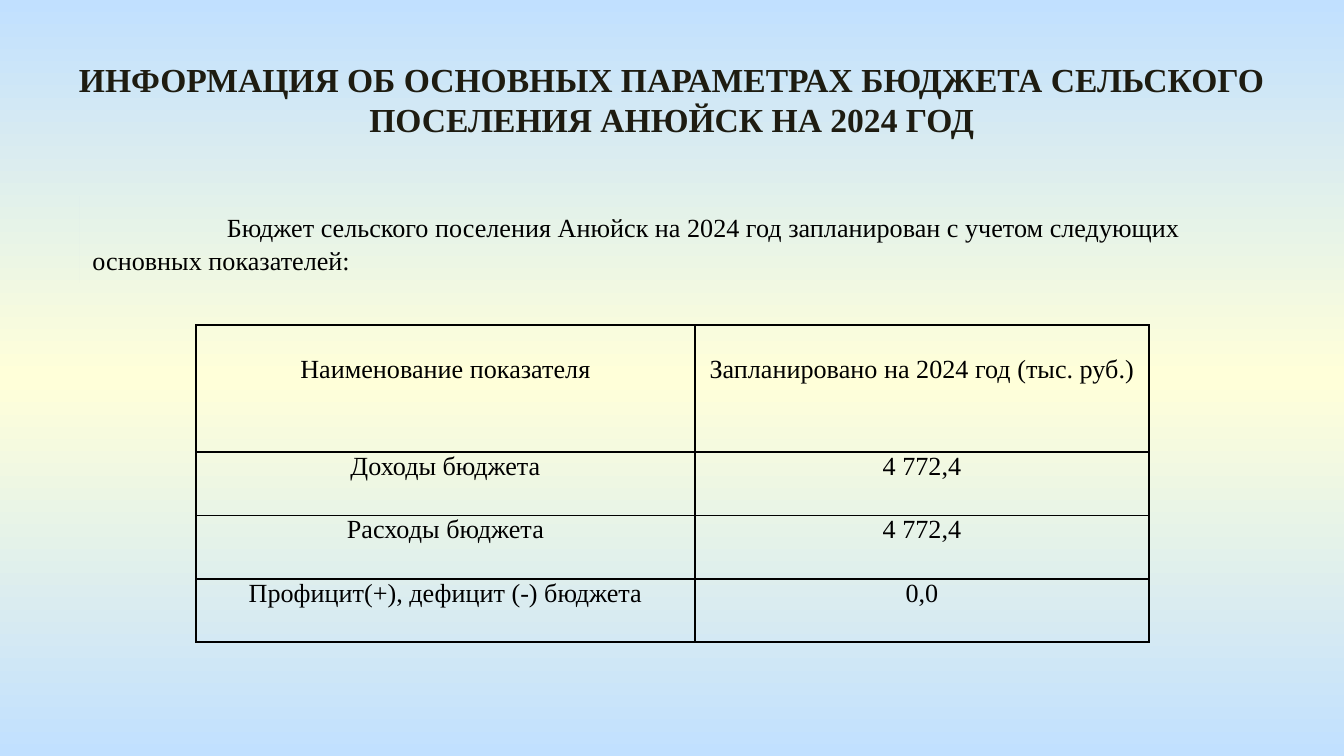
"""Build the slide with the main budget figures of a rural settlement."""
from copy import deepcopy

from lxml.etree import SubElement
from pptx import Presentation
from pptx.dml.color import RGBColor
from pptx.enum.shapes import MSO_SHAPE
from pptx.enum.text import MSO_ANCHOR, PP_ALIGN
from pptx.oxml import parse_xml
from pptx.oxml.ns import nsdecls, qn
from pptx.util import Inches, Pt

BLACK = RGBColor(0x00, 0x00, 0x00)
DARK = RGBColor(0x1E, 0x1C, 0x11)
SKY = RGBColor(0xC1, 0xE0, 0xFF)
CREAM = RGBColor(0xFF, 0xFF, 0xD9)

TITLE = "ИНФОРМАЦИЯ ОБ ОСНОВНЫХ ПАРАМЕТРАХ БЮДЖЕТА СЕЛЬСКОГО ПОСЕЛЕНИЯ АНЮЙСК НА 2024 ГОД"
INTRO = "Бюджет сельского поселения Анюйск на 2024 год запланирован с учетом следующих основных показателей:"
ROWS = [
    ("Наименование показателя", "Запланировано на 2024 год (тыс. руб.)"),
    ("Доходы бюджета", "4 772,4"),
    ("Расходы бюджета", "4 772,4"),
    ("Профицит(+), дефицит (-) бюджета", "0,0"),
]
STOPS = [(0, SKY), (0.5, CREAM), (1, SKY)]

WIDTH = 10
HEIGHT = WIDTH * 9 / 16
TITLE_AREA = (0.35, 0.39, 9.3, 0.71)
INTRO_AREA = (0.59, 1.46, 8.74, 0.64)
TABLE_LEFT, TABLE_TOP, TABLE_HEIGHT = 1.46, 2.42, 2.36
COLUMN_WIDTHS = (3.71, 3.38)
ROW_SHARES = (2, 1, 1, 1)
HEADER_DROP = 0.22
CELL_MARGINS = {"margin_left": 0.07, "margin_right": 0.07, "margin_top": 0, "margin_bottom": 0}

TITLE_FONT = {"name": "Times New Roman", "size": Pt(18), "bold": True}
BODY_FONT = {"name": "Times New Roman", "size": Pt(14), "bold": False}


def set_all(target, values):
    for name, value in values.items():
        setattr(target, name, value)


def write(frame, text, font, color, align):
    paragraph = frame.paragraphs[0]
    paragraph.alignment = align
    span = paragraph.add_run()
    span.text = text
    set_all(span.font, font)
    span.font.color.rgb = color
    return paragraph


def paint_background(page):
    fill = page.background.fill
    fill.gradient()
    stop_list = next(page.background._cSld.iter(qn("a:gsLst")))
    stop_list.append(deepcopy(stop_list[0]))
    for stop, (position, color) in zip(fill.gradient_stops, STOPS):
        stop.position = position
        stop.color.rgb = color
    fill.gradient_angle = 270


def add_title(page):
    box = page.shapes.add_textbox(*map(Inches, TITLE_AREA))
    box.text_frame.word_wrap = True
    write(box.text_frame, TITLE, TITLE_FONT, DARK, PP_ALIGN.CENTER)


def add_intro(page):
    box = page.shapes.add_shape(MSO_SHAPE.RECTANGLE, *map(Inches, INTRO_AREA))
    box._element.set("useBgFill", "1")
    box.line.fill.background()
    box.shadow.inherit = False
    set_all(box.text_frame, {"word_wrap": True, "vertical_anchor": MSO_ANCHOR.BOTTOM})
    paragraph = write(box.text_frame, INTRO, BODY_FONT, BLACK, PP_ALIGN.LEFT)
    paragraph.line_spacing = Pt(17.7)
    paragraph._p.get_or_add_pPr().set("indent", str(Inches(1)))


def add_borders(cell):
    properties = cell._tc.get_or_add_tcPr()
    for place, side in enumerate("LRTB"):
        line = parse_xml(f'<a:ln{side} {nsdecls("a")} w="{Pt(1)}"/>')
        solid = SubElement(line, qn("a:solidFill"))
        SubElement(solid, qn("a:srgbClr")).set("val", str(BLACK))
        properties.insert(place, line)


def add_budget_table(page):
    heights = [TABLE_HEIGHT * share / sum(ROW_SHARES) for share in ROW_SHARES]
    area = (TABLE_LEFT, TABLE_TOP, sum(COLUMN_WIDTHS), TABLE_HEIGHT)
    table = page.shapes.add_table(len(ROWS), len(COLUMN_WIDTHS), *map(Inches, area)).table
    set_all(table, {"first_row": False, "horz_banding": False})
    for column, width in zip(table.columns, COLUMN_WIDTHS):
        column.width = Inches(width)
    for number, (row, height, texts) in enumerate(zip(table.rows, heights, ROWS)):
        row.height = Inches(height)
        for cell, text in zip(row.cells, texts):
            set_all(cell, {name: Inches(size) for name, size in CELL_MARGINS.items()})
            if number == 0:
                cell.margin_top = Inches(HEADER_DROP)
            cell.fill.background()
            add_borders(cell)
            write(cell.text_frame, text, BODY_FONT, BLACK, PP_ALIGN.CENTER)


def main():
    deck = Presentation()
    set_all(deck, {"slide_width": Inches(WIDTH), "slide_height": Inches(HEIGHT)})
    page = deck.slides.add_slide(deck.slide_layouts[6])
    paint_background(page)
    add_intro(page)
    add_title(page)
    add_budget_table(page)
    deck.save("out.pptx")


if __name__ == "__main__":
    main()
